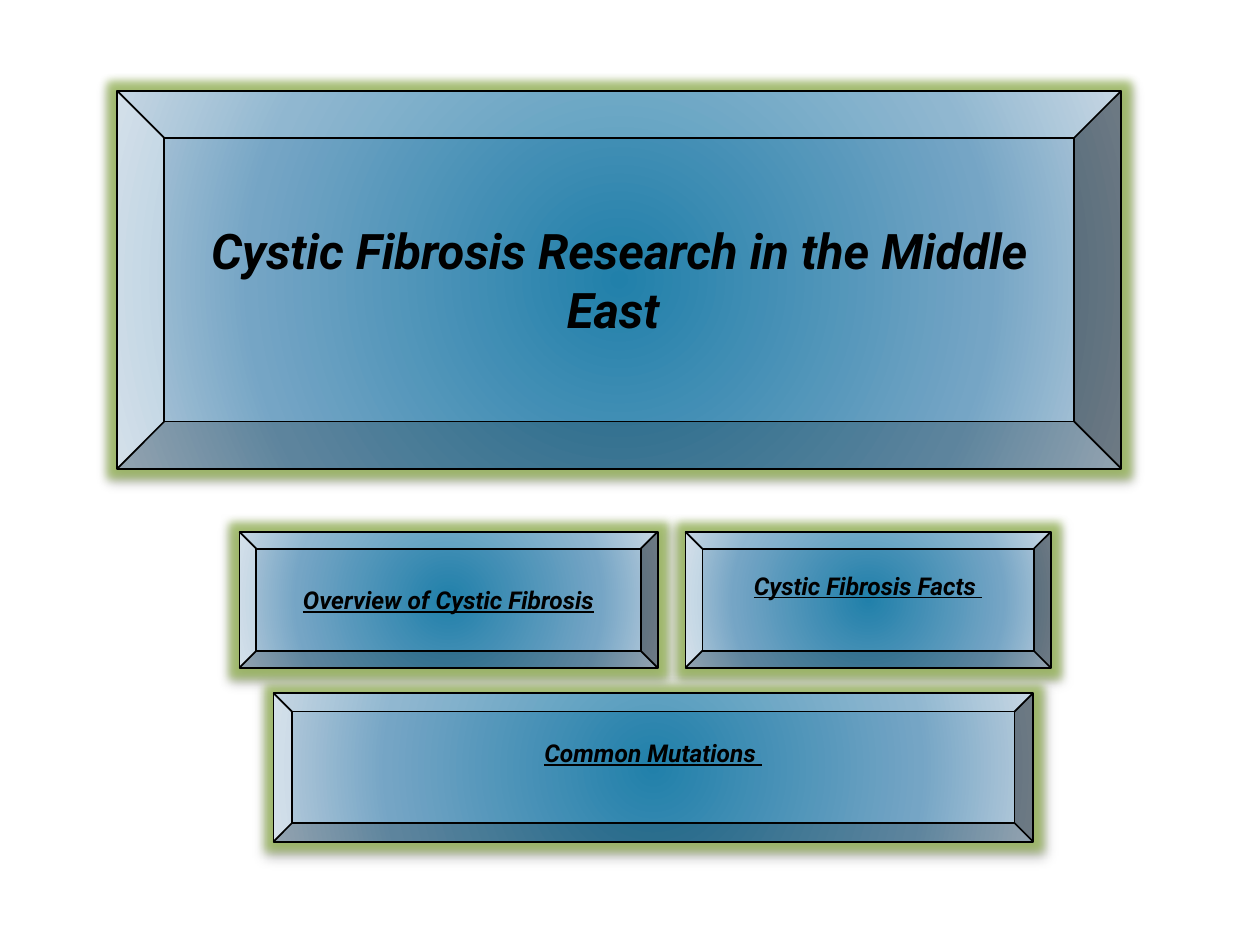
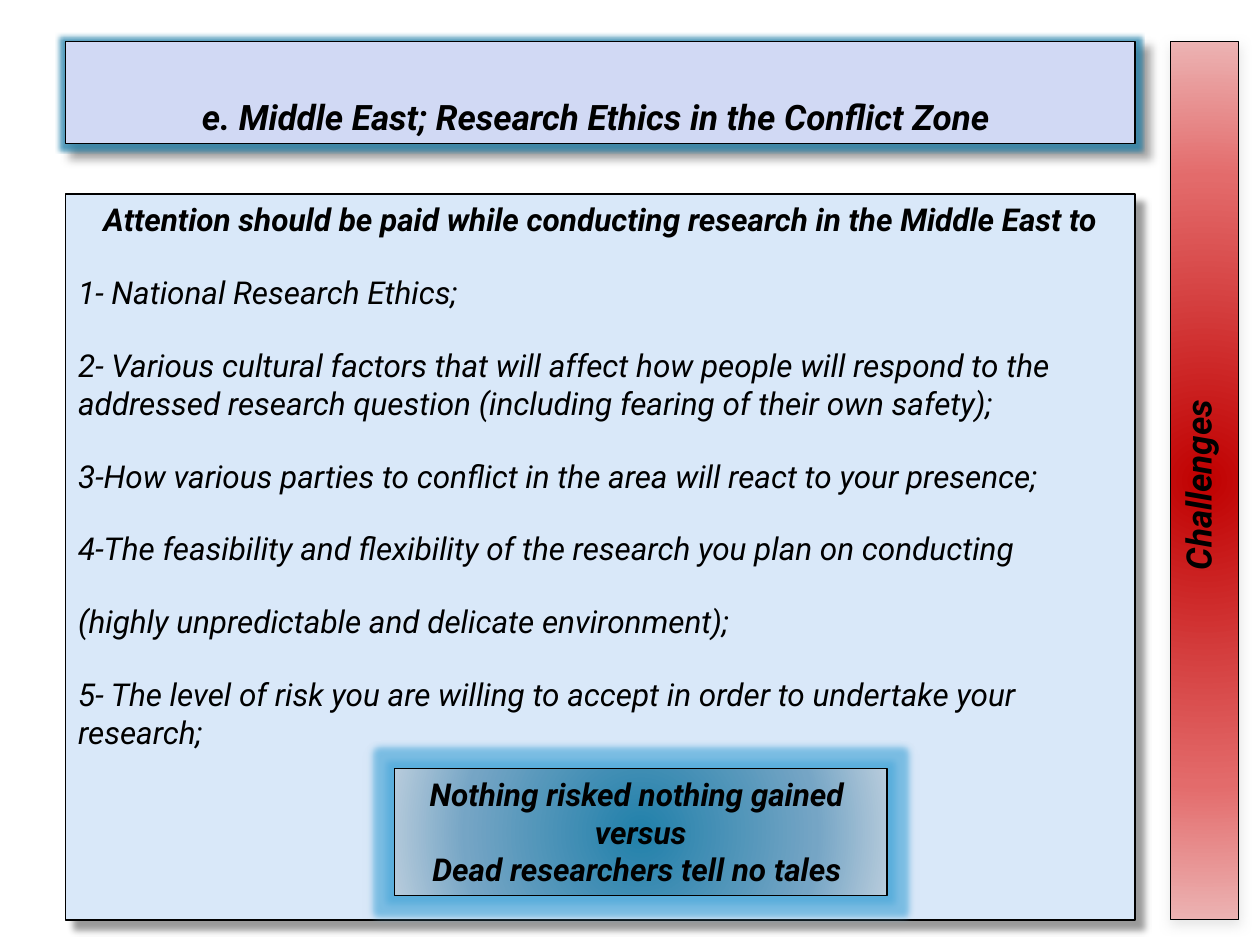
"""Builds two slides on cystic fibrosis research in the Middle East."""
from dataclasses import dataclass
from typing import Optional, Union

from lxml import etree
from pptx import Presentation
from pptx.dml.color import RGBColor
from pptx.enum.shapes import MSO_SHAPE
from pptx.enum.text import MSO_ANCHOR, MSO_AUTO_SIZE, PP_ALIGN
from pptx.oxml.ns import qn
from pptx.util import Inches, Pt

BEVEL, RECTANGLE = MSO_SHAPE.BEVEL, MSO_SHAPE.RECTANGLE
TOP, MIDDLE, BOTTOM = MSO_ANCHOR.TOP, MSO_ANCHOR.MIDDLE, MSO_ANCHOR.BOTTOM
CENTER, LEFT = PP_ALIGN.CENTER, PP_ALIGN.LEFT
NO_AUTOFIT = MSO_AUTO_SIZE.NONE

SLIDE_WIDTH, SLIDE_HEIGHT = Inches(10), Inches(7.5)
COLUMNS, ROWS = 100, 75
TITLE_CONTENT_LAYOUT, BLANK_LAYOUT = 1, 6
FONT = "Roboto"

BLACK = RGBColor(0x00, 0x00, 0x00)
SILVER = RGBColor(0xC0, 0xC0, 0xC0)
LAVENDER = RGBColor(0xD1, 0xD9, 0xF4)
PALE_BLUE = RGBColor(0xD9, 0xE8, 0xF9)
GREEN_GLOW = RGBColor(0x9B, 0xBB, 0x59)
TEAL_GLOW = RGBColor(0x21, 0x80, 0xAA)
SKY_GLOW = RGBColor(0x4A, 0xA8, 0xDA)
BLUES = (TEAL_GLOW, RGBColor(0x75, 0xA5, 0xC5), RGBColor(0xB8, 0xCC, 0xDC))
REDS = (RGBColor(0xC0, 0x00, 0x00), RGBColor(0xE3, 0x6B, 0x6B), RGBColor(0xEC, 0xB3, 0xB3))
GRADIENT_STOPS = (0, 69, 100)


@dataclass(frozen=True)
class Glow:
    """A soft coloured halo, with its radius in points."""
    color: RGBColor
    radius: float
    opacity: int


@dataclass(frozen=True)
class Shadow:
    """A cast shadow, with lengths in points and direction in degrees."""
    color: RGBColor
    blur: float
    distance: float
    direction: int


SOFT_SHADOW = Shadow(BLACK, 5, 2, 90)
SILVER_SHADOW = Shadow(SILVER, 7, 2, 90)
CORNER_SHADOW = Shadow(BLACK, 4, 7, 45)
BUTTON_GLOW = Glow(GREEN_GLOW, 10, 75)


@dataclass(frozen=True)
class Panel:
    """A framed text panel, placed in grid columns and rows."""
    column: float
    row: float
    columns: float
    rows: float
    paragraphs: tuple[str, ...]
    size: float
    fill: Union[RGBColor, tuple[RGBColor, ...]] = BLUES
    outline: MSO_SHAPE = RECTANGLE
    border: float = 1
    glow: Optional[Glow] = None
    shadow: Shadow = SOFT_SHADOW
    anchor: MSO_ANCHOR = TOP
    underline: bool = False
    wrap: bool = True
    bottom_inset: float = 0.05
    direction: str = "horz"


def button(column: float, row: float, columns: float, rows: float, caption: str,
           size: float = 14, underline: bool = True, bottom_inset: float = 0.05) -> Panel:
    """Describe one bevelled panel of the opening slide."""
    return Panel(column, row, columns, rows, (caption,), size, outline=BEVEL,
                 glow=BUTTON_GLOW, anchor=MIDDLE, underline=underline,
                 bottom_inset=bottom_inset)


RAISED_INSET = 0.28
TOPIC_ROW, TOPIC_ROWS = 42.2, 10.8
OPENING_BUTTONS = (
    button(9.3, 7.2, 79.7, 30, "Cystic Fibrosis Research in the Middle East ", 28, False),
    button(19, TOPIC_ROW, 33.2, TOPIC_ROWS, "Overview of Cystic Fibrosis"),
    button(54.4, TOPIC_ROW, 29, TOPIC_ROWS, "Cystic Fibrosis Facts ",
           bottom_inset=RAISED_INSET),
    button(21.7, 55, 60.3, 11.8, "Common Mutations ", bottom_inset=RAISED_INSET),
)

CONTENT_COLUMN, CONTENT_COLUMNS, HEADER_ROW = 5.2, 84.9, 3.3
ETHICS_TITLE = Panel(
    CONTENT_COLUMN, HEADER_ROW, CONTENT_COLUMNS, 8.1,
    ("e. Middle East; Research Ethics in the Conflict Zone ",), 20, LAVENDER,
    glow=Glow(TEAL_GLOW, 5, 75), shadow=CORNER_SHADOW, anchor=BOTTOM)
PRECAUTIONS = Panel(
    CONTENT_COLUMN, 15.4, CONTENT_COLUMNS, 57.6, (
        "Attention should be paid while conducting research in the Middle East to",
        "1- National Research Ethics;",
        "2- Various cultural factors that will affect how people will respond to the "
        "addressed research question (including fearing of their own safety);",
        "3-How various parties to conflict in the area will react to your presence;",
        "4-The feasibility and flexibility of the research you plan on conducting",
        "(highly unpredictable and delicate environment);",
        "5- The level of risk you are willing to accept in order to undertake your research;",
    ), 18, PALE_BLUE, shadow=CORNER_SHADOW)
CHALLENGES = Panel(92.9, HEADER_ROW, 5.4, 69.7, ("Challenges ",), 20, REDS,
                   border=0.75, shadow=SILVER_SHADOW, direction="vert270")
MOTTO = Panel(
    31.3, 61, 39.1, 10.1,
    ("Nothing risked nothing gained ", "versus", "Dead researchers tell no tales "), 18,
    border=0.75, glow=Glow(SKY_GLOW, 8, 65), shadow=SILVER_SHADOW, wrap=False)


def add_node(parent, tag: str, **attributes):
    """Append a DrawingML element and return it."""
    values = {name: str(value) for name, value in attributes.items()}
    return etree.SubElement(parent, qn(f"a:{tag}"), values)


def add_color(parent, color: RGBColor, opacity: int = 100) -> None:
    """Append a colour with its opacity in percent."""
    add_node(add_node(parent, "srgbClr", val=color), "alpha", val=opacity * 1000)


def set_fill(shape, fill: Union[RGBColor, tuple[RGBColor, ...]]) -> None:
    """Fill with one colour, or with a gradient out of the centre."""
    if isinstance(fill, RGBColor):
        shape.fill.solid()
        shape.fill.fore_color.rgb = fill
        return
    gradient = add_node(shape.element.spPr, "gradFill", rotWithShape=1)
    stops = add_node(gradient, "gsLst")
    for position, color in zip(GRADIENT_STOPS, fill):
        add_color(add_node(stops, "gs", pos=position * 1000), color)
    path = add_node(gradient, "path", path="circle")
    add_node(path, "fillToRect", l=50000, t=50000, r=50000, b=50000)


def set_effects(shape, glow: Optional[Glow], shadow: Shadow) -> None:
    """Apply the glow and the shadow."""
    shape.shadow.inherit = False
    effects = shape.element.spPr.find(qn("a:effectLst"))
    if glow:
        halo = add_node(effects, "glow", rad=Pt(glow.radius))
        add_color(halo, glow.color, glow.opacity)
    cast = add_node(effects, "outerShdw", blurRad=Pt(shadow.blur), dist=Pt(shadow.distance),
                    dir=shadow.direction * 60000, algn="ctr", rotWithShape=0)
    add_color(cast, shadow.color, 40)


def write_text(shape, panel: Panel) -> None:
    """Write the paragraphs in the shared bold italic style."""
    frame = shape.text_frame
    frame.text = "\n".join(panel.paragraphs)
    frame.auto_size = NO_AUTOFIT
    frame.word_wrap = panel.wrap
    frame.vertical_anchor = panel.anchor
    frame.margin_left = frame.margin_right = Inches(0.1)
    frame.margin_top = Inches(0.05)
    frame.margin_bottom = Inches(panel.bottom_inset)
    shape.element.txBody.find(qn("a:bodyPr")).set("vert", panel.direction)
    for paragraph in frame.paragraphs:
        paragraph.alignment = CENTER
        for run in paragraph.runs:
            font = run.font
            font.name, font.size = FONT, Pt(panel.size)
            font.bold = font.italic = True
            font.underline = panel.underline
            font.color.rgb = BLACK


def format_panel(shape, panel: Panel) -> None:
    """Place and style a placeholder or shape as the panel describes."""
    shape.left = round(SLIDE_WIDTH * panel.column / COLUMNS)
    shape.top = round(SLIDE_HEIGHT * panel.row / ROWS)
    shape.width = round(SLIDE_WIDTH * panel.columns / COLUMNS)
    shape.height = round(SLIDE_HEIGHT * panel.rows / ROWS)
    set_fill(shape, panel.fill)
    shape.line.color.rgb = BLACK
    shape.line.width = Pt(panel.border)
    set_effects(shape, panel.glow, panel.shadow)
    write_text(shape, panel)


def add_panel(slide, panel: Panel) -> None:
    """Add a panel as a new shape."""
    format_panel(slide.shapes.add_shape(panel.outline, 0, 0, 0, 0), panel)


def format_precautions(body) -> None:
    """Turn the body into a centred lead line and an unbulleted list."""
    format_panel(body, PRECAUTIONS)
    for index, paragraph in enumerate(body.text_frame.paragraphs):
        paragraph.space_before = Pt(20)
        properties = paragraph._p.get_or_add_pPr()
        properties.set("marL", "0")
        properties.set("indent", "0")
        add_node(properties, "buNone")
        if index:
            paragraph.alignment = LEFT
            for run in paragraph.runs:
                run.font.bold = False


def build_opening(deck) -> None:
    """Build the opening slide from its bevelled buttons."""
    slide = deck.slides.add_slide(deck.slide_layouts[BLANK_LAYOUT])
    for panel in OPENING_BUTTONS:
        add_panel(slide, panel)


def build_ethics(deck) -> None:
    """Build the slide on research ethics."""
    slide = deck.slides.add_slide(deck.slide_layouts[TITLE_CONTENT_LAYOUT])
    format_panel(slide.shapes.title, ETHICS_TITLE)
    format_precautions(slide.placeholders[1])
    for panel in (CHALLENGES, MOTTO):
        add_panel(slide, panel)


def main() -> None:
    """Build and save the presentation."""
    deck = Presentation()
    deck.slide_width, deck.slide_height = SLIDE_WIDTH, SLIDE_HEIGHT
    build_opening(deck)
    build_ethics(deck)
    deck.save("out.pptx")


if __name__ == "__main__":
    main()
